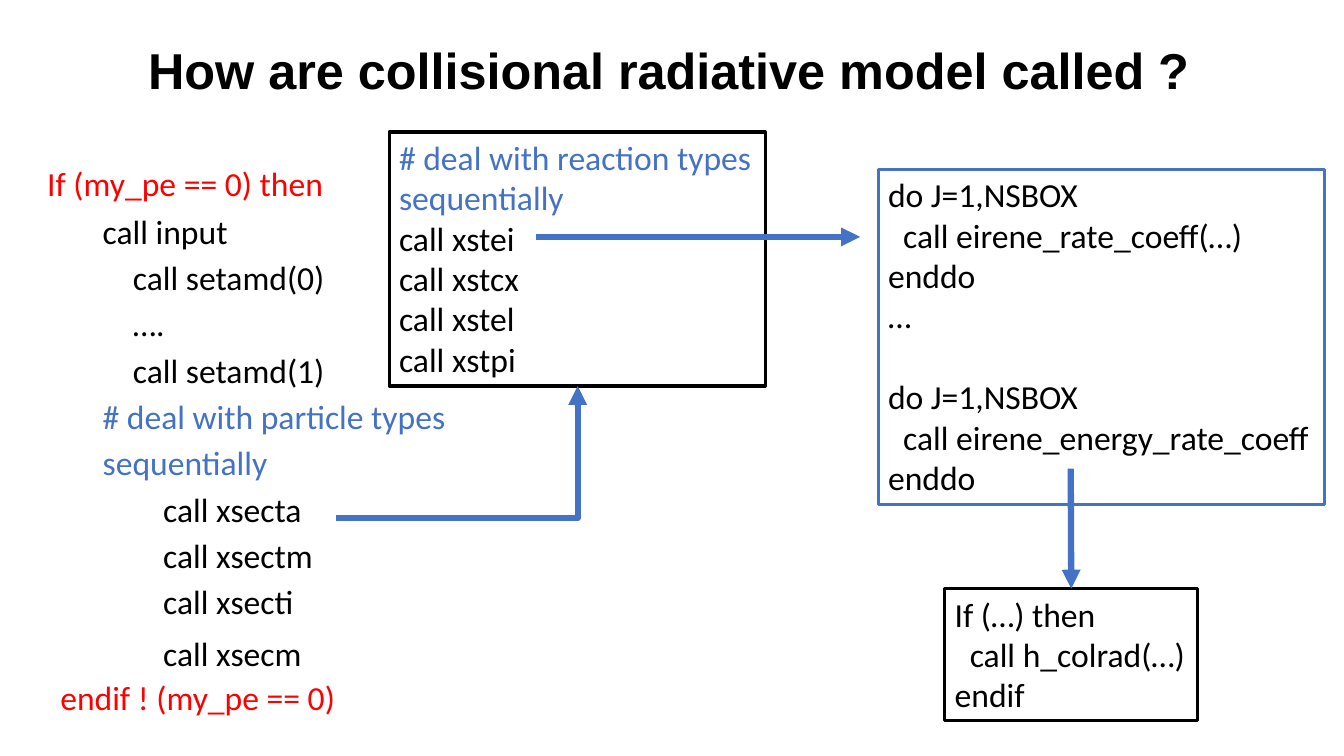
from dataclasses import dataclass
from pptx import Presentation
from pptx.dml.color import RGBColor
from pptx.enum.shapes import MSO_CONNECTOR as Link
from pptx.enum.text import MSO_ANCHOR as Anchor, MSO_AUTO_SIZE as Fit
from pptx.oxml.ns import qn
from pptx.util import Inches, Pt
from lxml.etree import SubElement


@dataclass(frozen=True)
class Theme:
    black: RGBColor = RGBColor(0, 0, 0)
    blue: RGBColor = RGBColor(0x44, 0x72, 0xC4)
    red: RGBColor = RGBColor(0xFF, 0, 0)
    title_font: str = "Arial"
    code_font: str = "Calibri"
    title_size: float = 36
    code_size: float = 24
    border: float = 2.25
    arrow: float = 4.5


theme = Theme()
INDENT = 0.15  # inches per code indent level

deck = Presentation()
deck.slide_width, deck.slide_height = Inches(13.33), Inches(7.5)
page = deck.slides.add_slide(deck.slide_layouts[6])


def add_text(lines, area, font=theme.code_font, size=theme.code_size, bold=False,
             border=None, wrap=False, anchor=Anchor.TOP, spacing=1.0, before=0):
    """Add a text box; each line is (text, colour, indent level, extra points above)."""
    box = page.shapes.add_textbox(*map(Inches, area))
    if border is not None:
        box.line.color.rgb = border
        box.line.width = Pt(theme.border)
    frame = box.text_frame
    frame.word_wrap = wrap
    frame.auto_size = Fit.NONE if wrap else Fit.SHAPE_TO_FIT_TEXT
    frame.vertical_anchor = anchor
    for index, (text, color, level, extra) in enumerate(lines):
        para = frame.paragraphs[0] if index == 0 else frame.add_paragraph()
        para.line_spacing = spacing
        para.space_before = Pt(before + extra)
        if level:
            para._p.get_or_add_pPr().set("marL", str(Inches(level * INDENT)))
        span = para.add_run()
        span.text = text
        span.font.name, span.font.size, span.font.bold = font, Pt(size), bold
        span.font.color.rgb = color
    return box


def add_arrow(kind, start, end):
    arrow = page.shapes.add_connector(kind, *map(Inches, start + end))
    arrow.line.color.rgb = theme.blue
    arrow.line.width = Pt(theme.arrow)
    SubElement(arrow.line._get_or_add_ln(), qn("a:tailEnd"), type="triangle")
    SubElement(arrow._element.spPr, qn("a:effectLst"))
    return arrow


add_text([("How are collisional radiative model called ?", theme.black, 0, 0)],
         (1.37, 0, 11.5, 1.45), font=theme.title_font, size=theme.title_size,
         bold=True, wrap=True, anchor=Anchor.MIDDLE, spacing=0.9)

add_text([
    ("call input", theme.black, 0, 0),
    ("call setamd(0)", theme.black, 2, 0),
    ("….", theme.black, 2, 0),
    ("call setamd(1)", theme.black, 2, 0),
    ("# deal with particle types", theme.blue, 0, 0),
    ("sequentially", theme.blue, 0, 0),
    ("call xsecta", theme.black, 4, 0),
    ("call xsectm", theme.black, 4, 0),
    ("call xsecti", theme.black, 4, 0),
    ("call xsecm", theme.black, 4, 4),
], (0.92, 2.12, 11.5, 4.76), wrap=True, spacing=0.8, before=10)

add_text([
    ("# deal with reaction types", theme.blue, 0, 0),
    ("sequentially", theme.blue, 0, 0),
    *[(f"call {name}", theme.black, 0, 0) for name in ("xstei", "xstcx", "xstel", "xstpi")],
], (3.86, 1.31, 3.73, 2.52), border=theme.black)
add_arrow(Link.STRAIGHT, (5.32, 2.35), (8.53, 2.35))

add_text([
    ("do J=1,NSBOX", theme.black, 0, 0),
    ("call eirene_rate_coeff(…)", theme.black, 1, 0),
    ("enddo", theme.black, 0, 0),
    ("…", theme.black, 0, 0),
    ("do J=1,NSBOX", theme.black, 0, 29),
    ("call eirene_energy_rate_coeff", theme.black, 1, 0),
    ("enddo", theme.black, 0, 0),
], (8.71, 1.68, 4.43, 3.33), border=theme.blue)

colrad_box = add_text([
    ("If (…) then", theme.black, 0, 0),
    ("call h_colrad(…)", theme.black, 1, 0),
    ("endif", theme.black, 0, 0),
], (9.37, 5.84, 2.51, 1.31), border=theme.black)
add_arrow(Link.STRAIGHT, (10.62, 4.65), (10.62, 5.84)).end_connect(colrad_box, 0)

add_text([("If (my_pe == 0) then", theme.red, 0, 0)], (0.37, 1.57, 2.96, 0.5))
add_text([("endif ! (my_pe == 0)", theme.red, 0, 0)], (0.5, 6.67, 2.96, 0.5))

# A single-corner elbow: right from xsecta, then up to the reaction box
elbow = add_arrow(Link.ELBOW, (3.33, 5.14), (5.73, 3.83))
elbow._element.spPr.find(qn("a:prstGeom")).set("prst", "bentConnector2")

deck.save("out.pptx")
